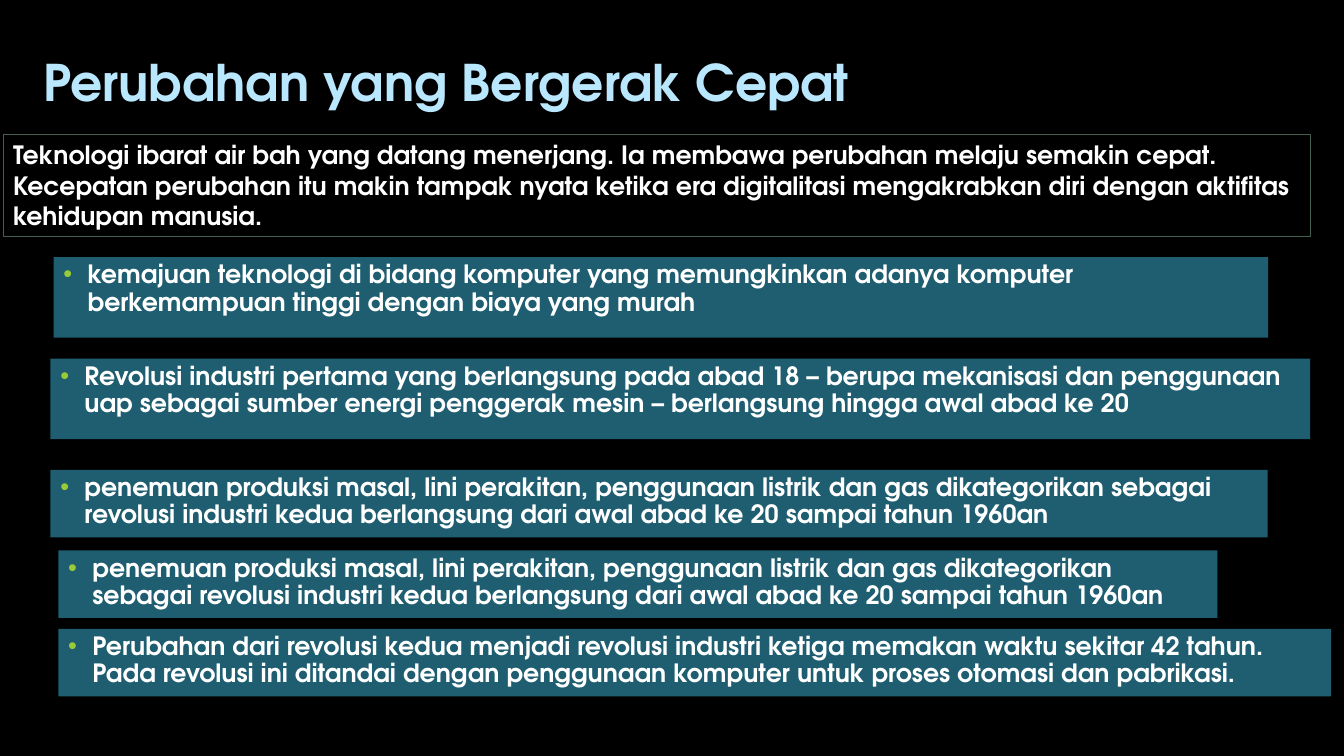
import pptx
import pptx.util
import pptx.dml.color
import pptx.enum.shapes
import pptx.enum.text
import lxml.etree

Cm, Pt = pptx.util.Cm, pptx.util.Pt
ANCHOR = pptx.enum.text.MSO_ANCHOR

# Content: positions are (left, top, width, height) in cm
FONT = "TeX Gyre Adventor"
COLORS = {"background": "000000", "title": "B9E7FD", "text": "FFFFFF",
          "border": "455F51", "panel": "1E5E70", "bullet": "99CB38"}
TITLE = ("Perubahan yang Bergerak Cepat", (0.84, 1.07, 28.78, 1.9))
INTRO = ("Teknologi ibarat air bah yang datang menerjang. Ia membawa perubahan "
         "melaju semakin cepat. Kecepatan perubahan itu makin tampak nyata ketika "
         "era digitalitasi mengakrabkan diri dengan aktifitas kehidupan manusia.",
         (0.08, 3.38, 32.94, 2.57))
SECOND_REVOLUTION = ("penemuan produksi masal, lini perakitan, penggunaan listrik dan gas "
                     "dikategorikan sebagai revolusi industri kedua berlangsung dari awal "
                     "abad ke 20 sampai tahun 1960an")
POINTS = [
    ("kemajuan teknologi di bidang komputer yang memungkinkan adanya komputer "
     "berkemampuan tinggi dengan biaya yang murah", (1.35, 6.48, 30.61, 2.03)),
    ("Revolusi industri pertama yang berlangsung pada abad 18 – berupa mekanisasi "
     "dan penggunaan uap sebagai sumber energi penggerak mesin – berlangsung hingga "
     "awal abad ke 20", (1.27, 9.04, 31.75, 2.03)),
    (SECOND_REVOLUTION, (1.27, 11.84, 30.68, 1.7)),
    (SECOND_REVOLUTION, (1.47, 13.87, 29.21, 1.7)),
    ("Perubahan dari revolusi kedua menjadi revolusi industri ketiga memakan waktu "
     "sekitar 42 tahun. Pada revolusi ini ditandai dengan penggunaan komputer untuk "
     "proses otomasi dan pabrikasi.", (1.47, 15.85, 32.08, 1.7)),
]


def rgb(name):
    return pptx.dml.color.RGBColor.from_string(COLORS[name])


def add_bullet(p, indent):
    pPr = p._p.get_or_add_pPr()
    pPr.set("marL", str(indent))
    pPr.set("indent", str(-indent))
    ns = pptx.oxml.ns.qn
    color = lxml.etree.SubElement(pPr, ns("a:buClr"))
    lxml.etree.SubElement(color, ns("a:srgbClr"), val=COLORS["bullet"])
    lxml.etree.SubElement(pPr, ns("a:buFont"), typeface="Arial")
    lxml.etree.SubElement(pPr, ns("a:buChar"), char="•")


def write(sp, text, size, color, anchor, spacing=1.0, bullet=False):
    tf = sp.text_frame
    tf.word_wrap = True
    tf.vertical_anchor = anchor
    p = tf.paragraphs[0]
    p.alignment = pptx.enum.text.PP_ALIGN.LEFT
    p.line_spacing = spacing
    if bullet:
        add_bullet(p, Cm(0.61))
    r = p.add_run()
    r.text = text
    r.font.name, r.font.size, r.font.bold = FONT, Pt(size), True
    r.font.color.rgb = rgb(color)


def add_panel(s, box, fill=None, line=None):
    sp = s.shapes.add_shape(pptx.enum.shapes.MSO_SHAPE.RECTANGLE, *map(Cm, box))
    sp.shadow.inherit = False
    if fill:
        sp.fill.solid()
        sp.fill.fore_color.rgb = rgb(fill)
    else:
        sp.fill.background()
    if line:
        sp.line.color.rgb = rgb(line)
        sp.line.width = Pt(0.75)
    else:
        sp.line.fill.background()
    return sp


def main():
    prs = pptx.Presentation()
    prs.slide_width, prs.slide_height = Cm(33.87), Cm(19.05)
    s = prs.slides.add_slide(prs.slide_layouts[6])
    s.background.fill.solid()
    s.background.fill.fore_color.rgb = rgb("background")

    # Title
    text, box = TITLE
    write(s.shapes.add_textbox(*map(Cm, box)), text, 36, "title", ANCHOR.BOTTOM, 0.9)

    # Framed introduction
    text, box = INTRO
    write(add_panel(s, box, line="border"), text, 18, "text", ANCHOR.MIDDLE)

    # Bulleted panels
    for text, box in POINTS:
        write(add_panel(s, box, fill="panel"), text, 18, "text", ANCHOR.TOP, 0.9, bullet=True)

    prs.save("out.pptx")


if __name__ == "__main__":
    main()
